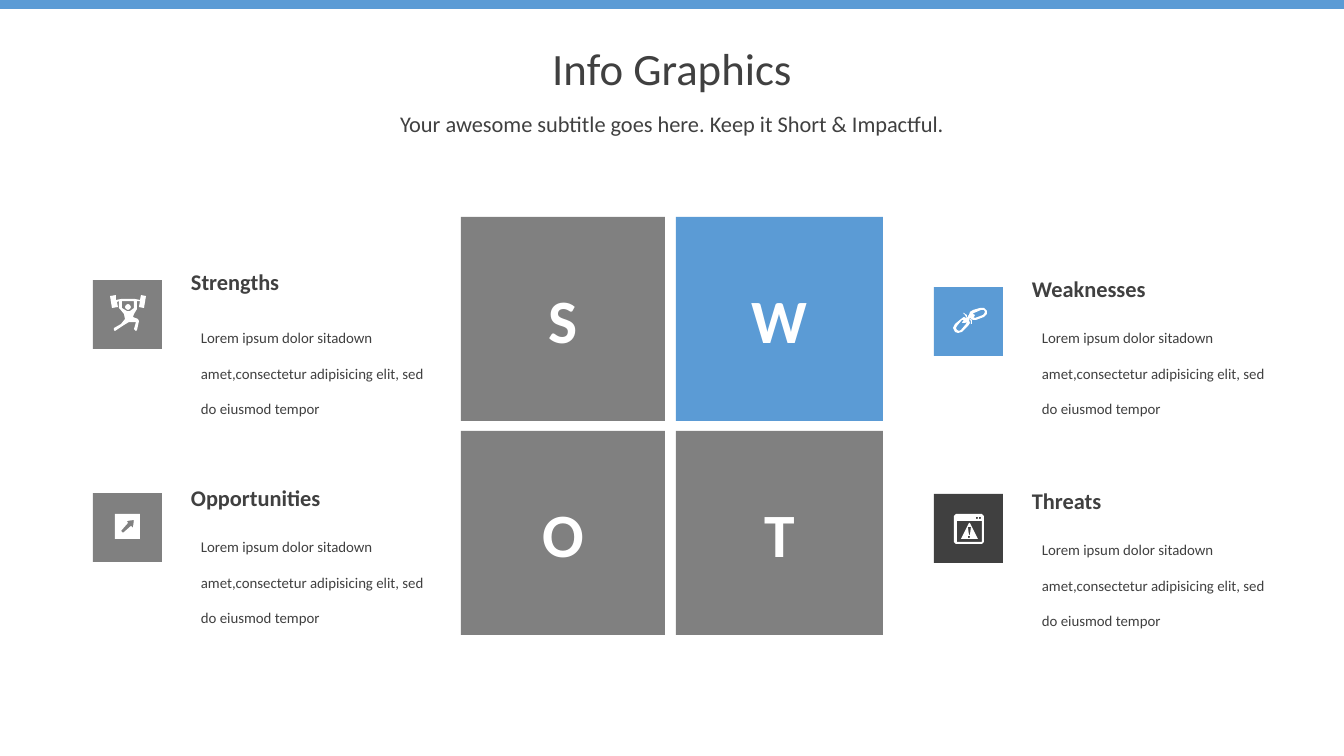
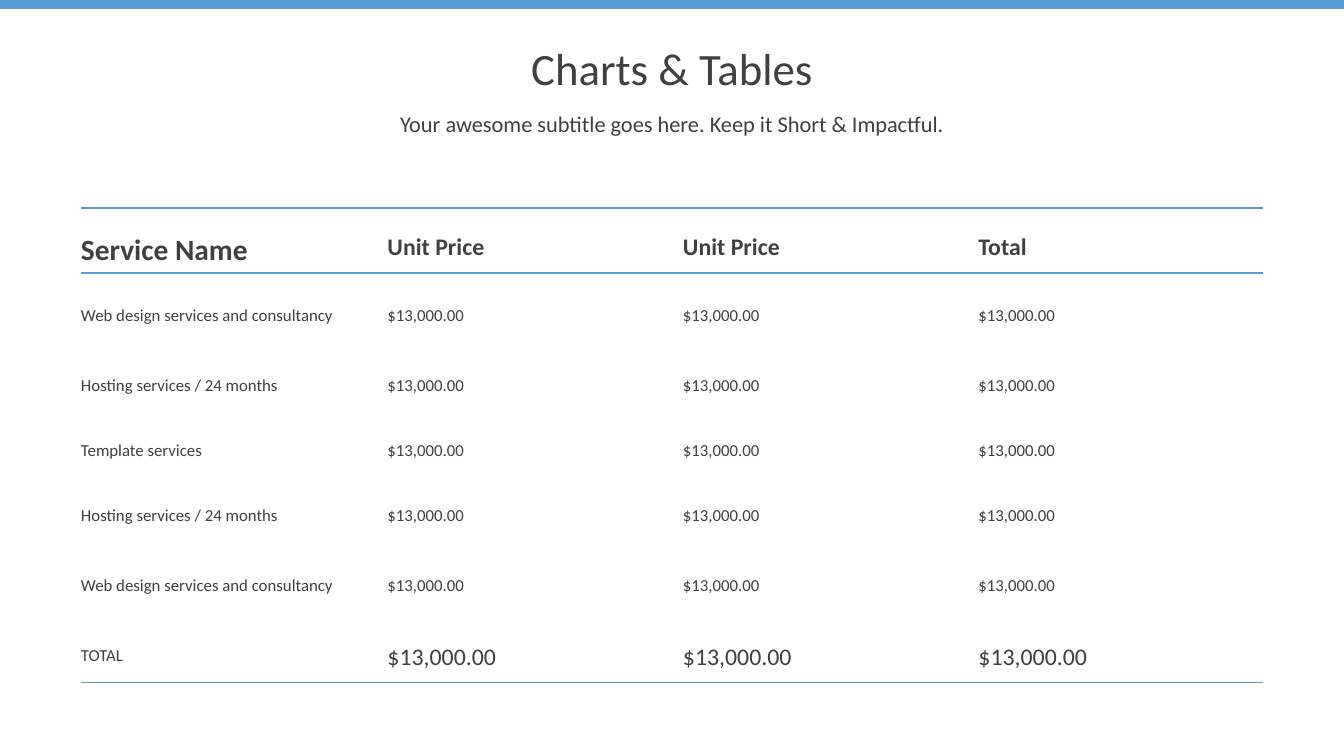
from lxml import etree
from pptx import Presentation
from pptx.dml.color import RGBColor
from pptx.enum.shapes import MSO_SHAPE
from pptx.enum.text import MSO_ANCHOR, PP_ALIGN
from pptx.oxml.ns import qn
from pptx.util import Pt

PX = 914400 / 100.8
SLIDE_W, SLIDE_H = 1344, 756
FONT = "Calibri"
COLORS = {"blue": "5B9BD5", "gray": "808080", "dark": "404040", "white": "FFFFFF"}
RECT = MSO_SHAPE.RECTANGLE
TOP, MIDDLE = MSO_ANCHOR.TOP, MSO_ANCHOR.MIDDLE
LEFT, CENTER = PP_ALIGN.LEFT, PP_ALIGN.CENTER
NO_STYLE = "{2D5ABB26-0587-4C30-8999-92F81FD0307C}"

SUBTITLE = "Your awesome subtitle goes here. Keep it Short & Impactful."
LOREM = ("Lorem ipsum dolor sitadown amet,consectetur adipisicing elit, "
         "sed do eiusmod tempor")

# Icon outlines, in px from the corner of their tile; inner outlines cut holes.
LIFTER = [
    [(35, 24), (37, 25), (38, 27), (37, 29), (35, 30), (33, 29), (32, 27), (33, 25)],
    [(53, 16), (51, 28), (46, 27), (47, 21), (44, 21), (44, 29), (41, 34), (40, 37),
     (45, 39), (46, 41), (44, 50), (43, 51), (41, 49), (43, 42), (36, 42), (31, 45),
     (22, 51), (21, 50), (21, 48), (28, 44), (32, 39), (31, 34), (27, 29), (26, 28),
     (26, 21), (24, 22), (25, 27), (19, 28), (17, 16), (23, 15), (23, 20), (28, 19),
     (42, 19), (47, 20), (48, 15)],
    [(41, 21), (29, 21), (29, 28), (34, 31), (37, 31), (41, 28)],
]
BROKEN_CHAIN = [
    [(35, 32), (33, 30), (32, 31), (30, 30), (27, 32), (21, 37), (19, 41), (21, 45),
     (24, 46), (28, 45), (34, 39), (36, 36), (35, 33)],
    [(32, 37), (27, 43), (25, 44), (23, 43), (22, 41), (23, 39), (28, 33), (30, 33),
     (29, 34), (28, 36), (31, 36), (33, 35)],
    [(53, 24), (50, 21), (46, 21), (39, 23), (36, 25), (35, 28), (34, 29), (34, 31),
     (35, 32), (36, 31), (39, 33), (42, 33), (50, 30), (53, 27)],
    [(49, 28), (41, 31), (39, 30), (40, 30), (41, 28), (39, 27), (38, 27), (40, 26),
     (47, 23), (50, 23), (51, 25), (50, 27)],
    [(36, 32), (38, 33), (38, 37), (37, 37), (37, 34), (35, 32)],
    [(31, 28), (29, 26), (30, 26), (31, 27), (33, 28), (33, 30), (32, 30)],
]
ARROW_BOX = [
    [(22, 21), (47, 21), (47, 46), (22, 46)],
    [(40, 35), (38, 33), (30, 40), (28, 38), (35, 30), (34, 28), (41, 27)],
]
WARNING_WINDOW = [
    [(22, 20), (48, 20), (50, 22), (50, 48), (48, 50), (22, 50), (20, 48), (20, 22)],
    [(23, 27), (48, 27), (48, 48), (23, 48)],
    [(42, 23), (44, 23), (44, 25), (42, 25)],
    [(45, 23), (47, 23), (47, 25), (45, 25)],
    [(27, 45), (44, 45), (36, 29), (35, 29)],
    [(34, 33), (37, 33), (36, 41), (35, 41)],
    [(34, 42), (36, 42), (36, 44), (34, 44)],
]

# heading, icon, tile colour, left, then tops of tile, heading and description
TOPICS = [
    ("Strengths", LIFTER, "gray", 93, 280, 259, 306),
    ("Weaknesses", BROKEN_CHAIN, "blue", 934, 287, 266, 306),
    ("Opportunities", ARROW_BOX, "gray", 93, 493, 475, 515),
    ("Threats", WARNING_WINDOW, "dark", 934, 494, 478, 518),
]
MATRIX = [[("S", "gray"), ("W", "blue")], [("O", "gray"), ("T", "gray")]]

PRICE = "$13,000.00"
SERVICES = [
    "Web design services and consultancy",
    "Hosting services / 24 months",
    "Template services",
    "Hosting services / 24 months",
    "Web design services and consultancy",
    "TOTAL",
]
PRICE_ROWS = [["Service Name", "Unit Price", "Unit Price", "Total"]]
PRICE_ROWS += [[service] + [PRICE] * 3 for service in SERVICES]
ROW_HEIGHTS = [65, 75, 65, 65, 65, 75, 65]


def px(length):
    return round(length * PX)


def rgb(color):
    return RGBColor.from_string(COLORS[color])


def write(frame, text, size, color="dark", bold=False, align=LEFT, anchor=TOP,
          spacing=None, before=None):
    frame.word_wrap = True
    frame.vertical_anchor = anchor
    line = frame.paragraphs[0]
    line.text = text
    line.alignment = align
    line.line_spacing = spacing
    line.space_before = before
    line.font.name = FONT
    line.font.size = Pt(size)
    line.font.bold = bold
    line.font.color.rgb = rgb(color)


def paint(shape, color):
    shape.shadow.inherit = False
    shape.fill.solid()
    shape.fill.fore_color.rgb = rgb(color)
    shape.line.fill.background()


def add_block(slide, left, top, width, height, color):
    block = slide.shapes.add_shape(RECT, px(left), px(top), px(width), px(height))
    paint(block, color)
    return block


def add_text(slide, left, top, width, height, text, size, **style):
    box = slide.shapes.add_textbox(px(left), px(top), px(width), px(height))
    write(box.text_frame, text, size, **style)
    return box.text_frame


def add_icon(slide, left, top, outlines):
    builder = slide.shapes.build_freeform(*outlines[0][0], scale=PX)
    for outline in outlines:
        builder.move_to(*outline[0])
        builder.add_line_segments(outline[1:], close=True)
    paint(builder.convert_to_shape(px(left), px(top)), "white")


def add_topic(slide, heading, icon, color, left, tile_top, heading_top, body_top):
    text_left = left + 98
    add_block(slide, left, tile_top, 69, 69, color)
    add_icon(slide, left, tile_top, icon)
    title = add_text(slide, text_left, heading_top, 210, 36, heading, 16, bold=True)
    title.margin_left = title.margin_right = title.margin_bottom = 0
    title.margin_top = px(9)
    add_text(slide, text_left, body_top, 248, 113, LOREM, 10.6, spacing=2.0)


def add_matrix(slide, left, top, height, widths, gap_x, gap_y):
    for row, letters in enumerate(MATRIX):
        x = left
        for (letter, color), width in zip(letters, widths):
            square = add_block(slide, x, top + row * (height + gap_y),
                               width, height, color)
            write(square.text_frame, letter, 44, "white", True, CENTER, MIDDLE)
            x += width + gap_x


def set_borders(cell, ruled):
    """Rule the named sides in blue and leave the others without a line."""
    properties = cell._tc.get_or_add_tcPr()
    for side in "LRTB":
        line = etree.SubElement(properties, qn(f"a:ln{side}"), w=str(Pt(1)))
        if side in ruled:
            fill = etree.SubElement(line, qn("a:solidFill"))
            etree.SubElement(fill, qn("a:srgbClr"), val=COLORS["blue"])
        else:
            etree.SubElement(line, qn("a:noFill"))


def price_size(row, column):
    if row == 0 and column == 0:
        return 21
    if row == 0 or (row == len(SERVICES) and column > 0):
        return 17
    return 12


def add_price_table(slide, left, top, width):
    columns = len(PRICE_ROWS[0])
    table = slide.shapes.add_table(len(PRICE_ROWS), columns, px(left), px(top),
                                   px(width), px(sum(ROW_HEIGHTS))).table
    table.first_row = table.horz_banding = False
    table._tbl.tblPr.find(qn("a:tableStyleId")).text = NO_STYLE
    for column in table.columns:
        column.width = px(width) // columns
    rules = {0: "TB", 1: "T", len(SERVICES): "B"}
    for r, values in enumerate(PRICE_ROWS):
        table.rows[r].height = px(ROW_HEIGHTS[r])
        for c, value in enumerate(values):
            cell = table.cell(r, c)
            write(cell.text_frame, value, price_size(r, c), bold=r == 0, spacing=1.5)
            cell.vertical_anchor = MIDDLE
            cell.margin_left, cell.margin_right = (px(11), 0) if c else (0, px(11))
            cell.margin_top = cell.margin_bottom = px(6)
            set_borders(cell, rules.get(r, ""))
            cell.fill.background()


def add_titled_slide(deck, title):
    slide = deck.slides.add_slide(deck.slide_layouts[6])
    add_block(slide, 0, 0, SLIDE_W, 9, "blue")
    heading = dict(align=CENTER, spacing=0.9, before=Pt(10))
    add_text(slide, 81, 34, 1182, 74, title, 32, anchor=MIDDLE, **heading)
    add_text(slide, 81, 108, 1182, 37, SUBTITLE, 16, **heading)
    return slide


def build_swot_slide(deck):
    slide = add_titled_slide(deck, "Info Graphics")
    for topic in TOPICS:
        add_topic(slide, *topic)
    add_matrix(slide, 461, 217, 204, (204, 207), 11, 10)


def build_price_slide(deck):
    slide = add_titled_slide(deck, "Charts & Tables")
    add_price_table(slide, 81, 208, 1182)


def main():
    deck = Presentation()
    deck.slide_width, deck.slide_height = px(SLIDE_W), px(SLIDE_H)
    build_swot_slide(deck)
    build_price_slide(deck)
    deck.save("out.pptx")


if __name__ == "__main__":
    main()
